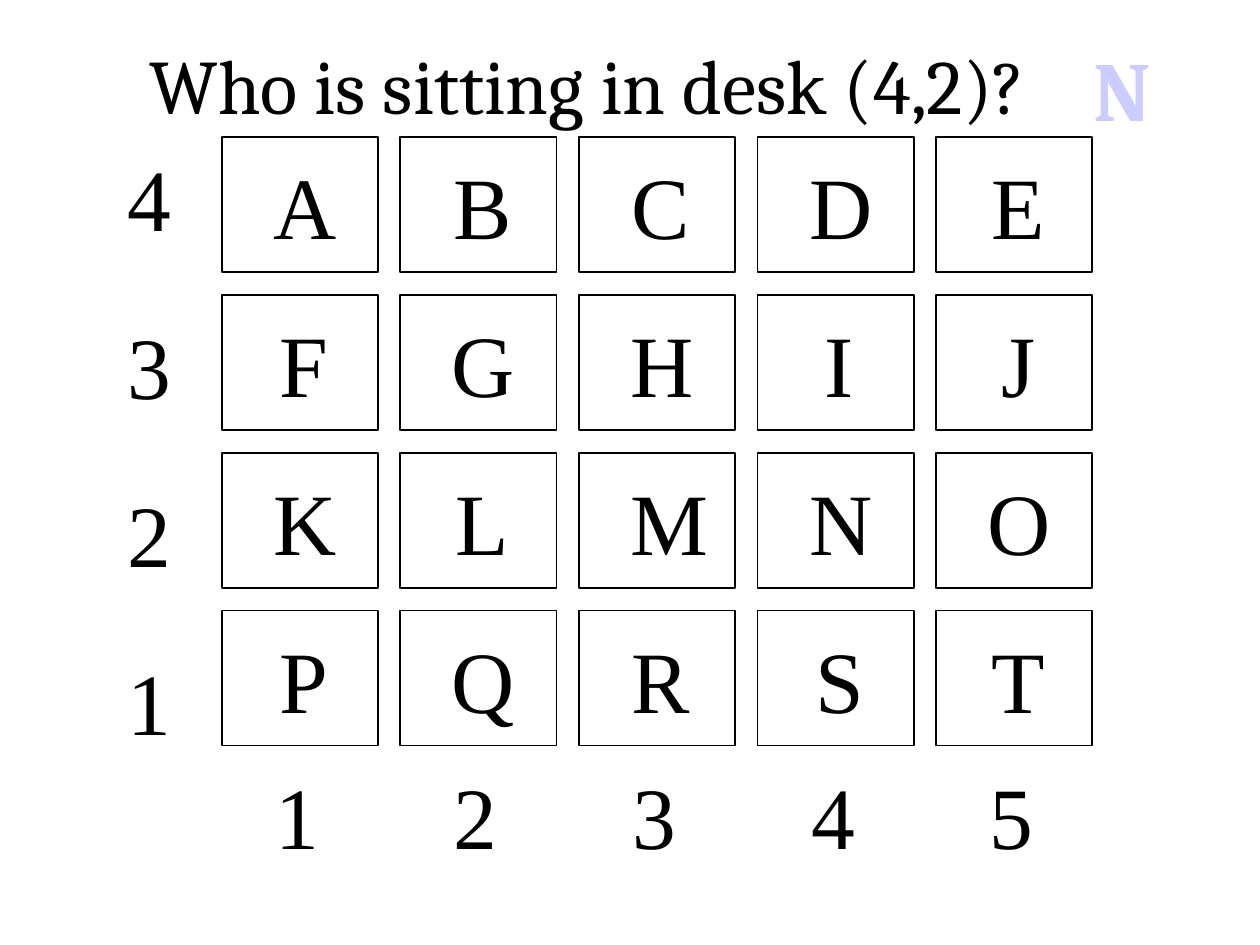
import pptx
import pptx.dml.color
import pptx.enum.shapes
import pptx.enum.text
import pptx.util

Cm = pptx.util.Cm
ALIGN = pptx.enum.text.PP_ALIGN
ANCHOR = pptx.enum.text.MSO_ANCHOR
COLORS = {"ink": "000000", "answer": "CCCCFF"}
SERIF = "Times New Roman"
HEADING = "Cambria"
DESK_ROWS = ["ABCDE", "FGHIJ", "KLMNO", "PQRST"]
DESK_WIDTH, DESK_HEIGHT = 3.15, 2.72
COLUMN_PITCH, ROW_PITCH = 3.6, 3.18
LABEL_WIDTH, LABEL_HEIGHT = 1.68, 2.36


def color(name):
    return pptx.dml.color.RGBColor.from_string(COLORS[name])


def add_text(slide, box, text, size=50, font=SERIF, ink="ink", bold=False,
             align=ALIGN.LEFT, anchor=ANCHOR.TOP):
    shape = slide.shapes.add_textbox(*(Cm(value) for value in box))
    frame = shape.text_frame
    frame.word_wrap = True
    frame.vertical_anchor = anchor
    paragraph = frame.paragraphs[0]
    paragraph.text = text
    paragraph.alignment = align
    paragraph.font.size = pptx.util.Pt(size)
    paragraph.font.name = font
    paragraph.font.bold = bold
    paragraph.font.color.rgb = color(ink)


def add_desk(slide, left, top, letter):
    shape = slide.shapes.add_shape(
        pptx.enum.shapes.MSO_SHAPE.RECTANGLE,
        Cm(left), Cm(top), Cm(DESK_WIDTH), Cm(DESK_HEIGHT))
    shape.shadow.inherit = False
    shape.fill.background()
    shape.line.color.rgb = color("ink")
    shape.line.width = pptx.util.Pt(1)
    add_text(slide, (left + 0.79, top + 0.18, 1.73, LABEL_HEIGHT), letter,
             align=ALIGN.CENTER)


def add_desks(slide, left, top):
    for row, letters in enumerate(DESK_ROWS):
        for column, letter in enumerate(letters):
            add_desk(slide, left + column * COLUMN_PITCH,
                     top + row * ROW_PITCH, letter)


def add_axis(slide, left, top, labels, step_x, step_y):
    for index, label in enumerate(labels):
        add_text(slide, (left + index * step_x, top + index * step_y,
                         LABEL_WIDTH, LABEL_HEIGHT), label)


def add_question(slide, left, top, width, height):
    answer_width = 1.9
    question_width = width - answer_width
    add_text(slide, (left, top, question_width, height),
             "Who is sitting in desk (4,2)?", size=44, font=HEADING,
             align=ALIGN.CENTER, anchor=ANCHOR.MIDDLE)
    add_text(slide, (left + question_width, top, answer_width, height),
             "N", size=48, font=HEADING, ink="answer", bold=True)


def main():
    presentation = pptx.Presentation()
    presentation.slide_width = Cm(25.4)
    presentation.slide_height = Cm(19.05)
    slide = presentation.slides.add_slide(presentation.slide_layouts[6])
    add_question(slide, 1.9, 0.64, 21.8, 2.11)
    add_desks(slide, 4.47, 2.77)
    add_axis(slide, 2.33, 2.77, "4321", 0, 3.39)
    add_axis(slide, 5.3, 15.24, "12345", COLUMN_PITCH, 0)
    presentation.save("out.pptx")


if __name__ == "__main__":
    main()
